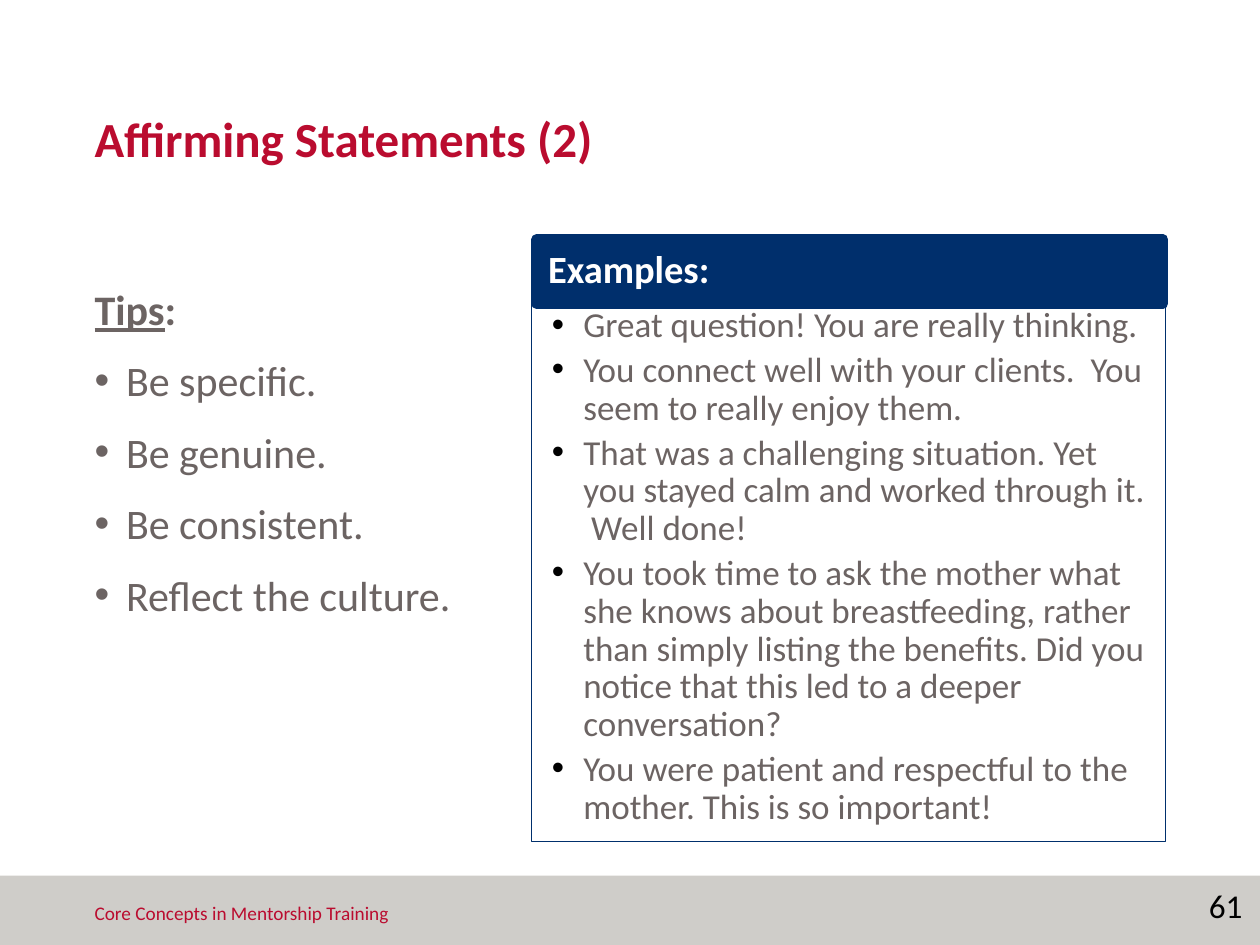
from lxml import etree
from pptx import Presentation
from pptx.dml.color import RGBColor
from pptx.enum.shapes import MSO_SHAPE
from pptx.enum.text import MSO_ANCHOR, MSO_AUTO_SIZE, PP_ALIGN
from pptx.oxml.ns import qn
from pptx.util import Inches, Pt

RECT = MSO_SHAPE.RECTANGLE
TOP, MID, LOW = MSO_ANCHOR.TOP, MSO_ANCHOR.MIDDLE, MSO_ANCHOR.BOTTOM
LEFT, RIGHT = PP_ALIGN.LEFT, PP_ALIGN.RIGHT
FIXED = MSO_AUTO_SIZE.NONE

RED, NAVY, GRAY, BAND = "BA0C2F", "002F6C", "6C6463", "CFCDC9"
WHITE, BLACK = "FFFFFF", "000000"
COLS, ROWS = 40, 30

TIPS = ["Be specific.", "Be genuine.", "Be consistent.", "Reflect the culture."]
QUOTES = [
    "Great question! You are really thinking.",
    "You connect well with your clients.  You seem to really enjoy them.",
    "That was a challenging situation. Yet you stayed calm and worked through it.  Well done!",
    "You took time to ask the mother what she knows about breastfeeding, rather than simply "
    "listing the benefits. Did you notice that this led to a deeper conversation?",
    "You were patient and respectful to the mother. This is so important!",
]


def shade(code):
    return RGBColor.from_string(code)


def apply(item, values):
    for name, value in values.items():
        setattr(item, name, value)


class Deck:
    font = "Calibri"

    def __init__(self, wide, high):
        self.prs = Presentation()
        self.prs.slide_width, self.prs.slide_height = Inches(wide), Inches(high)
        self.col = self.prs.slide_width / COLS
        self.row = self.prs.slide_height / ROWS
        self.slide = self.prs.slides.add_slide(self.prs.slide_layouts[5])

    def area(self, left, top, width, height):
        return [round(n * unit) for n, unit in
                zip((left, top, width, height), (self.col, self.row) * 2)]

    def frame(self, shape, pads, anchor=TOP):
        sides = ("margin_left", "margin_top", "margin_right", "margin_bottom")
        apply(shape.text_frame, dict(zip(sides, map(Inches, pads))))
        apply(shape.text_frame, {"word_wrap": True, "auto_size": FIXED,
                                 "vertical_anchor": anchor})
        return shape.text_frame

    def title(self, text, area, size, color):
        shape = self.slide.shapes.title
        apply(shape, dict(zip(("left", "top", "width", "height"), self.area(*area))))
        self.line(self.frame(shape, (0, 0, 0, 0), LOW), text, size, color, {"bold": True})

    def box(self, area, fill=None, edge=None, width=0):
        shape = self.slide.shapes.add_shape(RECT, *self.area(*area))
        shape.shadow.inherit = False
        if fill:
            shape.fill.solid()
            shape.fill.fore_color.rgb = shade(fill)
        else:
            shape.fill.background()
        if edge:
            shape.line.color.rgb = shade(edge)
            shape.line.width = Pt(width)
        else:
            shape.line.fill.background()
        return shape

    def text(self, area, pads):
        return self.frame(self.slide.shapes.add_textbox(*self.area(*area)), pads)

    def line(self, frame, text, size, color, style=None, form=None):
        para = frame.paragraphs[0]
        if para.runs:
            para = frame.add_paragraph()
        apply(para, {"alignment": LEFT, **(form or {})})
        self.run(para, text, size, color, style)
        return para

    def run(self, para, text, size, color, style=None):
        run = para.add_run()
        run.text = text
        apply(run.font, {"name": self.font, "size": Pt(size), **(style or {})})
        run.font.color.rgb = shade(color)

    def list(self, frame, items, size, color, dot, gap, form=None):
        for item in items:
            first = not frame.paragraphs[0].runs
            space = {} if first else {"space_before": Pt(gap)}
            para = self.line(frame, item, size, color, form={**(form or {}), **space})
            self.bullet(para, dot)

    def bullet(self, para, color):
        props = para._p.get_or_add_pPr()
        props.set("marL", str(Inches(0.25)))
        props.set("indent", str(-Inches(0.25)))
        tint = etree.SubElement(props, qn("a:buClr"))
        etree.SubElement(tint, qn("a:srgbClr"), val=color)
        etree.SubElement(props, qn("a:buFont"), typeface="Arial")
        etree.SubElement(props, qn("a:buChar"), char="•")


def main():
    deck = Deck(10, 7.5)
    deck.box((0, 27.8, COLS, 2.2), BAND)
    foot = deck.text((3, 28.4, 16.32, 1.16), (0, 0.05, 0.1, 0.05))
    deck.line(foot, "Core Concepts in Mentorship Training", 11, RED)
    deck.title("Affirming Statements (2)", (3, 1.32, 34, 4), 28, RED)

    tips = deck.text((3, 9, 13, 18), (0, 0, 0.1, 0))
    head = deck.line(tips, "Tips", 24, GRAY, {"bold": True, "underline": True})
    deck.run(head, ":", 24, GRAY, {"bold": True})
    deck.list(tips, TIPS, 24, GRAY, GRAY, 12)

    label = deck.box((17.04, 7.6, 19.88, 2.04), NAVY, NAVY, 6)
    deck.line(deck.frame(label, (0.09,) * 4, MID), "Examples:", 22, WHITE,
              {"bold": True}, {"line_spacing": 0.9})
    panel = deck.box((16.88, 9.64, 20.12, 17.08), None, NAVY, 0.75)
    deck.list(deck.frame(panel, (0.16, 0.03, 0.16, 0.03)), QUOTES, 20, GRAY, BLACK, 4,
              {"level": 1, "line_spacing": 0.9})

    page = deck.text((37, 27.72, 2.84, 2.28), (0.1,) * 4)
    deck.line(page, "61", 19, BLACK, form={"alignment": RIGHT})
    deck.prs.save("out.pptx")


if __name__ == "__main__":
    main()
